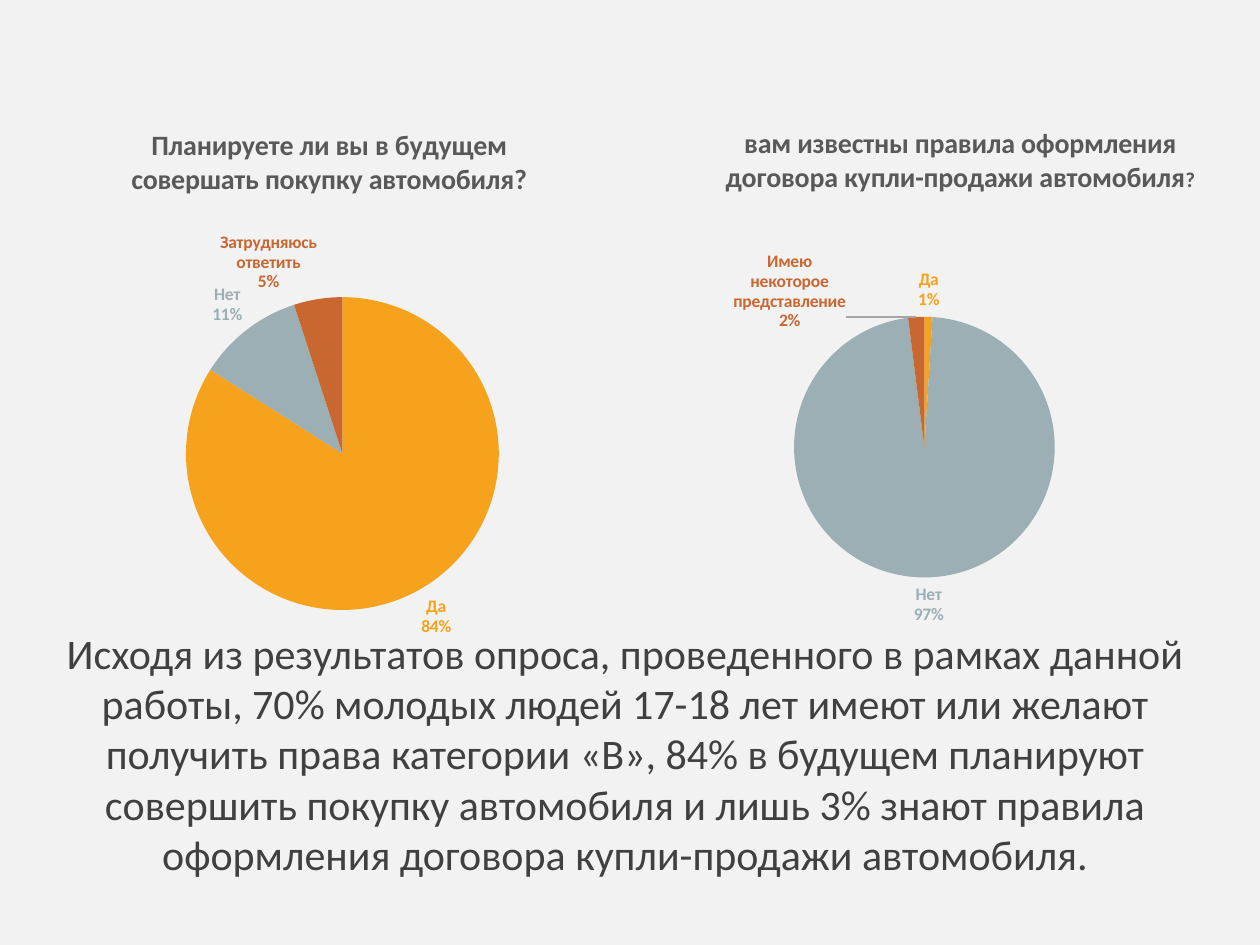
import pptx
import pptx.util
import pptx.chart.data
import pptx.dml.color
import pptx.enum.chart
import pptx.enum.text
import pptx.oxml
import pptx.oxml.ns

RGB = pptx.dml.color.RGBColor
BACKGROUND = RGB(0xF2, 0xF2, 0xF2)
BODY = RGB(0x40, 0x40, 0x40)
TITLE = RGB(0x59, 0x59, 0x59)
SLICES = [RGB(0xF6, 0xA2, 0x1D), RGB(0x9B, 0xAF, 0xB5), RGB(0xC9, 0x67, 0x31)]
FONT = "Calibri"
NS = pptx.oxml.ns.nsdecls("c", "a")
qn = pptx.oxml.ns.qn


def px(n):
    return pptx.util.Emu(round(n * 914400 / 126))


def format_font(font, size, color, bold=False):
    font.name = FONT
    font.size = pptx.util.Pt(size)
    font.bold = bold
    font.color.rgb = color


def add_text(p, text, size=24, color=BODY, bold=False, align=pptx.enum.text.PP_ALIGN.CENTER):
    p.alignment = align
    r = p.add_run()
    r.text = text
    format_font(r.font, size, color, bold)


def layout(x, y, w=None, h=None, inner=False, edge=True):
    """Manual chart layout, in fractions of the chart frame."""
    parts = ['<c:layoutTarget val="inner"/>'] if inner else []
    if edge:
        parts += ['<c:xMode val="edge"/>', '<c:yMode val="edge"/>']
    sizes = {"x": x, "y": y, "w": w, "h": h}
    parts += [f'<c:{k} val="{v:.3f}"/>' for k, v in sizes.items() if v is not None]
    return pptx.oxml.parse_xml(
        f'<c:layout {NS}><c:manualLayout>{"".join(parts)}</c:manualLayout></c:layout>')


def set_layout(parent, new, before):
    """Put a layout after the child named before, in place of any old one."""
    for old in parent.findall(qn("c:layout")):
        parent.remove(old)
    anchor = parent.find(qn(before)) if before else None
    if anchor is None:
        parent.insert(0, new)
    else:
        anchor.addnext(new)


def label_slices(series, moved):
    """Category and percentage outside each slice, in the colour of the slice."""
    outside = pptx.enum.chart.XL_LABEL_POSITION.OUTSIDE_END
    labels = series.data_labels
    labels.show_value = False
    labels.show_category_name = labels.show_percentage = True
    labels.position = outside
    for i, color in enumerate(SLICES):
        point = series.points[i]
        point.format.fill.solid()
        point.format.fill.fore_color.rgb = color
        point.format.line.fill.background()
        format_font(point.data_label.font, 10, color, True)
        point.data_label.position = outside

    d_lbls = series._element.find(qn("c:dLbls"))
    for i, lbl in enumerate(d_lbls.findall(qn("c:dLbl"))):
        for tag, val in (("showVal", "0"), ("showCatName", "1"), ("showPercent", "1")):
            lbl.find(qn("c:" + tag)).set("val", val)
        lbl.append(pptx.oxml.parse_xml(f"<c:separator {NS}>\n</c:separator>"))
        if i in moved:
            set_layout(lbl, layout(*moved[i], edge=False), "c:idx")

    # Leader lines for moved labels
    for old in d_lbls.findall(qn("c:showLeaderLines")):
        d_lbls.remove(old)
    d_lbls.append(pptx.oxml.parse_xml(f'<c:showLeaderLines {NS} val="1"/>'))
    d_lbls.append(pptx.oxml.parse_xml(
        f'<c:leaderLines {NS}><c:spPr><a:ln w="9525"><a:solidFill>'
        '<a:srgbClr val="A6A6A6"/></a:solidFill></a:ln></c:spPr></c:leaderLines>'))


def add_pie(s, frame, title, title_at, pie, cats, vals, moved):
    left, top, width, height = frame
    data = pptx.chart.data.CategoryChartData()
    data.categories = cats
    data.add_series("Series 1", vals)
    chart = s.shapes.add_chart(
        pptx.enum.chart.XL_CHART_TYPE.PIE, *map(px, frame), data).chart
    format_font(chart.font, 10, RGB(0, 0, 0))
    chart.has_legend = False
    chart.plots[0].vary_by_categories = True

    # Title
    chart.has_title = True
    p = chart.chart_title.text_frame.paragraphs[0]
    for text, size in title:
        add_text(p, text, size=size, color=TITLE, bold=True)
    x, y = title_at
    set_layout(chart.chart_title._element,
               layout((x - left) / width, (y - top) / height), "c:tx")

    # Pie
    x, y, d = pie
    root = chart._chartSpace
    set_layout(root.chart.plotArea,
               layout((x - left) / width, (y - top) / height, d / width, d / height, inner=True),
               None)
    label_slices(chart.plots[0].series[0], moved)
    root.chart.addnext(pptx.oxml.parse_xml(
        f"<c:spPr {NS}><a:noFill/><a:ln><a:noFill/></a:ln></c:spPr>"))


def add_conclusion(s, frame, text):
    tf = s.shapes.add_textbox(*map(px, frame)).text_frame
    tf.word_wrap = True
    tf.auto_size = pptx.enum.text.MSO_AUTO_SIZE.SHAPE_TO_FIT_TEXT
    add_text(tf.paragraphs[0], text)


def main():
    prs = pptx.Presentation()
    prs.slide_width, prs.slide_height = px(1260), px(945)
    s = prs.slides.add_slide(prs.slide_layouts[6])
    s.background.fill.solid()
    s.background.fill.fore_color.rgb = BACKGROUND

    # Conclusion under the charts
    add_conclusion(
        s, (42, 621, 1166, 267),
        "Исходя из результатов опроса, проведенного в рамках данной работы, "
        "70% молодых людей 17-18 лет имеют или желают получить права категории «В», "
        "84% в будущем планируют совершить покупку автомобиля и лишь 3% знают "
        "правила оформления договора купли-продажи автомобиля.")

    # Survey questions
    add_pie(s, (25, 116, 617, 546),
            [("Планируете ли вы в будущем совершать покупку автомобиля?", 16)],
            (126, 121), (186, 297, 313),
            ["Да", "Нет", "Затрудняюсь ответить"], [84, 11, 5], {})
    add_pie(s, (624, 115, 601, 527),
            [("вам известны правила оформления договора купли-продажи автомобиля", 16), ("?", 12)],
            (722, 121), (794, 317, 261),
            ["Да", "Нет", "Имею некоторое представление"], [1, 97, 2], {2: (-0.21, 0.04)})
    prs.save("out.pptx")


if __name__ == "__main__":
    main()
